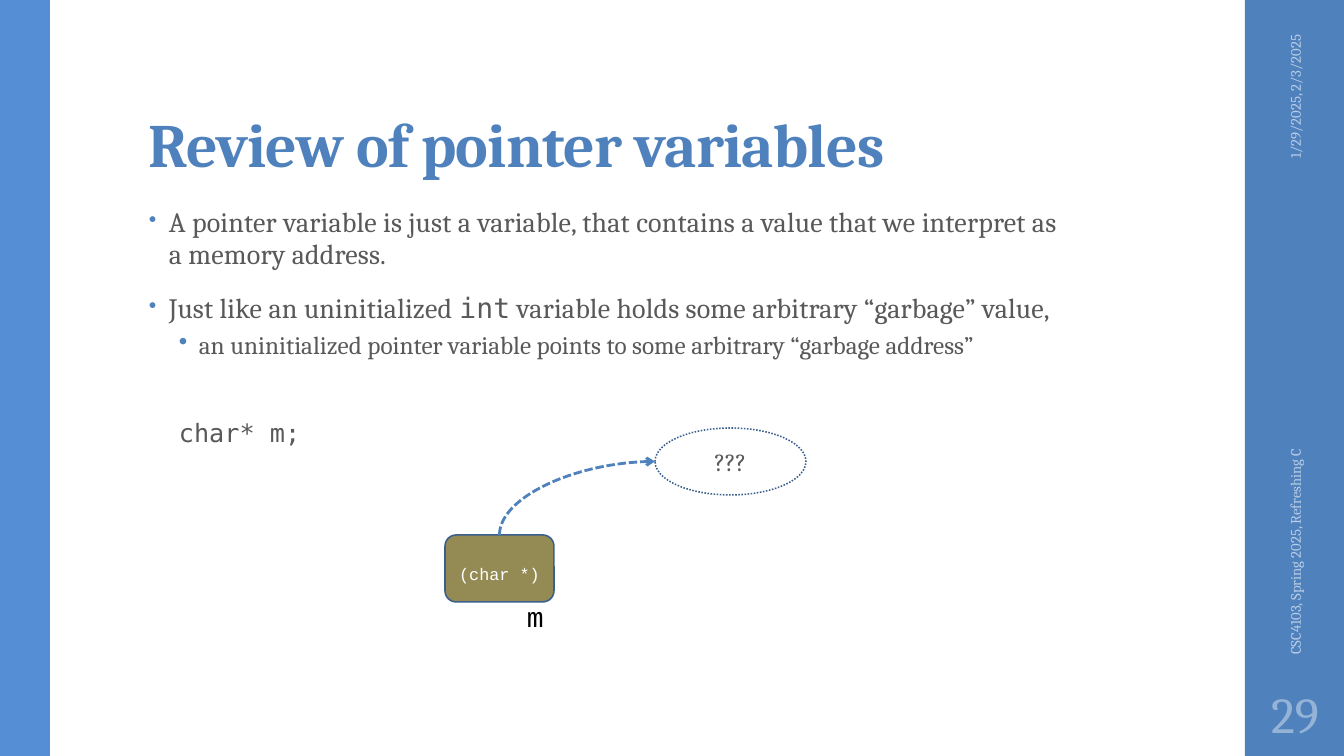
from lxml import etree
from pptx import Presentation, util as u
from pptx.dml.color import RGBColor
from pptx.enum import dml, shapes, text
from pptx.oxml import ns

PX = 914400 / 100.8
COLORS = {
    "accent": "4F81BD", "left band": "558ED5", "body": "595959",
    "pointer": "948A54", "outline": "3A5F8C", "footer": "B9CDE5",
    "number": "95B3D7", "white": "FFFFFF", "black": "000000",
}
SERIF, COURIER, MONO = "Cambria", "Courier New", "DejaVu Sans Mono"


def px(length):
    """Turn px into EMU."""
    return u.Emu(round(length * PX))


def color(name):
    """Look up a named colour."""
    return RGBColor.from_string(COLORS[name])


def add_xml(parent, tag, **attributes):
    """Append a DrawingML element."""
    return etree.SubElement(parent, ns.qn(f"a:{tag}"), attributes)


def style_font(font, size, tint, face=SERIF):
    """Set the size, colour and typeface of a font."""
    font.size, font.name = u.Pt(size), face
    font.color.rgb = color(tint)


def write(paragraph, pieces, size, tint, face=SERIF, spacing=0):
    """Fill a paragraph with text pieces, each a string or a (string, face) pair."""
    style_font(paragraph.font, size, tint, face)
    for piece in pieces:
        words, run_face = (piece, None) if isinstance(piece, str) else piece
        run = paragraph.add_run()
        run.text = words
        if run_face:
            run.font.name = run_face
        if spacing:
            run.font._element.set("spc", str(spacing))


def add_label(slide, box, words, size, tint, face=SERIF, align=None,
              anchor=text.MSO_ANCHOR.TOP, rotation=0, spacing=0, wrap=True):
    """Place a one-paragraph text box."""
    label = slide.shapes.add_textbox(*map(px, box))
    label.rotation = rotation
    frame = label.text_frame
    frame.word_wrap, frame.vertical_anchor = wrap, anchor
    frame.paragraphs[0].alignment = align
    write(frame.paragraphs[0], [words], size, tint, face, spacing)
    return label


def add_node(slide, kind, box, fill, line=None):
    """Place a preset shape with an optional fill and outline."""
    node = slide.shapes.add_shape(kind, *map(px, box))
    node.shadow.inherit = False
    if fill:
        node.fill.solid()
        node.fill.fore_color.rgb = color(fill)
    else:
        node.fill.background()
    if line:
        node.line.color.rgb, node.line.width = color(line), u.Pt(1.1)
    else:
        node.line.fill.background()
    return node


def add_sidebars(slide, box):
    """Draw both side bands with the date, footer and slide number."""
    left, top, width, height = box
    band = 100
    band_left = left + width - band + 1
    add_node(slide, shapes.MSO_SHAPE.RECTANGLE, (band_left, top, band - 1, height), "accent")
    add_node(slide, shapes.MSO_SHAPE.RECTANGLE, (left, top, 50, height), "left band")
    middle = text.MSO_ANCHOR.MIDDLE
    for words, center, length, align in (
            ("1/29/2025, 2/3/2025", 130, 210, text.PP_ALIGN.RIGHT),
            ("CSC4103, Spring 2025, Refreshing C", 467, 395, text.PP_ALIGN.LEFT)):
        place = (band_left + 50 - length / 2, top + center - 20, length, 40)
        add_label(slide, place, words, 10.5, "footer", align=align, anchor=middle, rotation=270)
    number = add_label(slide, (band_left, top + 680, band, 66), "29", 36, "number",
                       align=text.PP_ALIGN.CENTER, anchor=middle)
    number.text_frame.margin_left = number.text_frame.margin_right = px(5)


def add_title(slide, box):
    """Write the slide title at the bottom of its box."""
    title = add_label(slide, box, "Review of pointer variables", 44, "accent",
                      anchor=text.MSO_ANCHOR.BOTTOM, spacing=-50)
    heading = title.text_frame.paragraphs[0]
    heading.font.bold, heading.line_spacing = True, 0.9


def add_body(slide, box):
    """Write the bullets and the code line."""
    frame = slide.shapes.add_textbox(*map(px, box)).text_frame
    frame.word_wrap = True
    points = (
        (0, ["A pointer variable is just a variable, that contains a value "
             "that we interpret as a memory address."], 0, 20, SERIF),
        (0, ["Just like an uninitialized ", ("int", MONO),
             " variable holds some arbitrary “garbage” value,"], 14, 20, SERIF),
        (1, ["an uninitialized pointer variable points to some arbitrary "
             "“garbage address”"], 3, 18, SERIF),
        (1, ["char* m;"], 41, 18, MONO),
    )
    for index, (level, pieces, before, size, face) in enumerate(points):
        point = frame.add_paragraph() if index else frame.paragraphs[0]
        point.level = level
        point.line_spacing = 0.9 if level else 0.95
        point.space_before = u.Pt(before)
        point.space_after = u.Pt(3 if level else 2)
        properties = point._p.get_or_add_pPr()
        bulleted = face == SERIF
        indent = px(20) if bulleted else 0
        properties.set("marL", str(px(30 * level) + indent))
        properties.set("indent", str(-indent))
        if bulleted:
            add_xml(add_xml(properties, "buClr"), "srgbClr", val=COLORS["accent"])
            add_xml(properties, "buSzPct", val="100000" if level else "80000")
            add_xml(properties, "buChar", char="•")
        else:
            add_xml(properties, "buNone")
        write(point, pieces, size, "body", face, 0 if level else 10)


def add_pointer_arrow(slide, pointer, target):
    """Curve a dashed arrow from the top of the pointer to the left of the target."""
    arrow = slide.shapes.add_connector(shapes.MSO_CONNECTOR.CURVE, 0, 0, 0, 0)
    arrow.begin_connect(pointer, 0)
    arrow.end_connect(target, 2)
    start_x, start_y = pointer.left + pointer.width // 2, pointer.top
    end_x, end_y = target.left, target.top + target.height // 2
    rise, run = start_y - end_y, end_x - start_x
    arrow.left = (start_x + end_x - rise) // 2
    arrow.top = (start_y + end_y - run) // 2
    arrow.width, arrow.height = rise, run
    properties = arrow._element.spPr
    for name, value in (("rot", "5400000"), ("flipH", "1"), ("flipV", "1")):
        properties.find(ns.qn("a:xfrm")).set(name, value)
    properties.find(ns.qn("a:prstGeom")).set("prst", "curvedConnector2")
    arrow.line.color.rgb, arrow.line.width = color("accent"), u.Pt(2)
    arrow.line.dash_style = dml.MSO_LINE.SQUARE_DOT
    add_xml(properties.find(ns.qn("a:ln")), "tailEnd", type="arrow")
    add_xml(properties, "effectLst")


def add_diagram(slide, box):
    """Draw the pointer, its label and the unknown address it points to."""
    left, top, width, height = box
    pointer = add_node(slide, shapes.MSO_SHAPE.ROUNDED_RECTANGLE,
                       (left, top + 107, 109, 67), "pointer", "outline")
    garbage = add_node(slide, shapes.MSO_SHAPE.OVAL,
                       (left + width - 151, top, 151, 67), None, "outline")
    garbage.line.dash_style = dml.MSO_LINE.ROUND_DOT
    pointer.text_frame.vertical_anchor = text.MSO_ANCHOR.TOP
    pointer.text_frame.margin_top = px(26)
    for node, words, size, tint, face in (
            (pointer, "(char *)", 12, "white", COURIER),
            (garbage, "???", 18, "body", SERIF)):
        caption = node.text_frame.paragraphs[0]
        caption.alignment = text.PP_ALIGN.CENTER
        write(caption, [words], size, tint, face)
    add_pointer_arrow(slide, pointer, garbage)
    add_label(slide, (left + 72, top + height - 44, 37, 44), "m", 20, "black", COURIER, wrap=False)


def main():
    """Build and save the slide."""
    deck = Presentation()
    deck.slide_width, deck.slide_height = px(1344), px(756)
    slide = deck.slides.add_slide(deck.slide_layouts[6])
    add_sidebars(slide, (0, 0, 1344, 756))
    add_title(slide, (139, 32, 1068, 154))
    add_body(slide, (139, 202, 948, 480))
    add_diagram(slide, (445, 428, 361, 211))
    deck.save("out.pptx")


if __name__ == "__main__":
    main()
